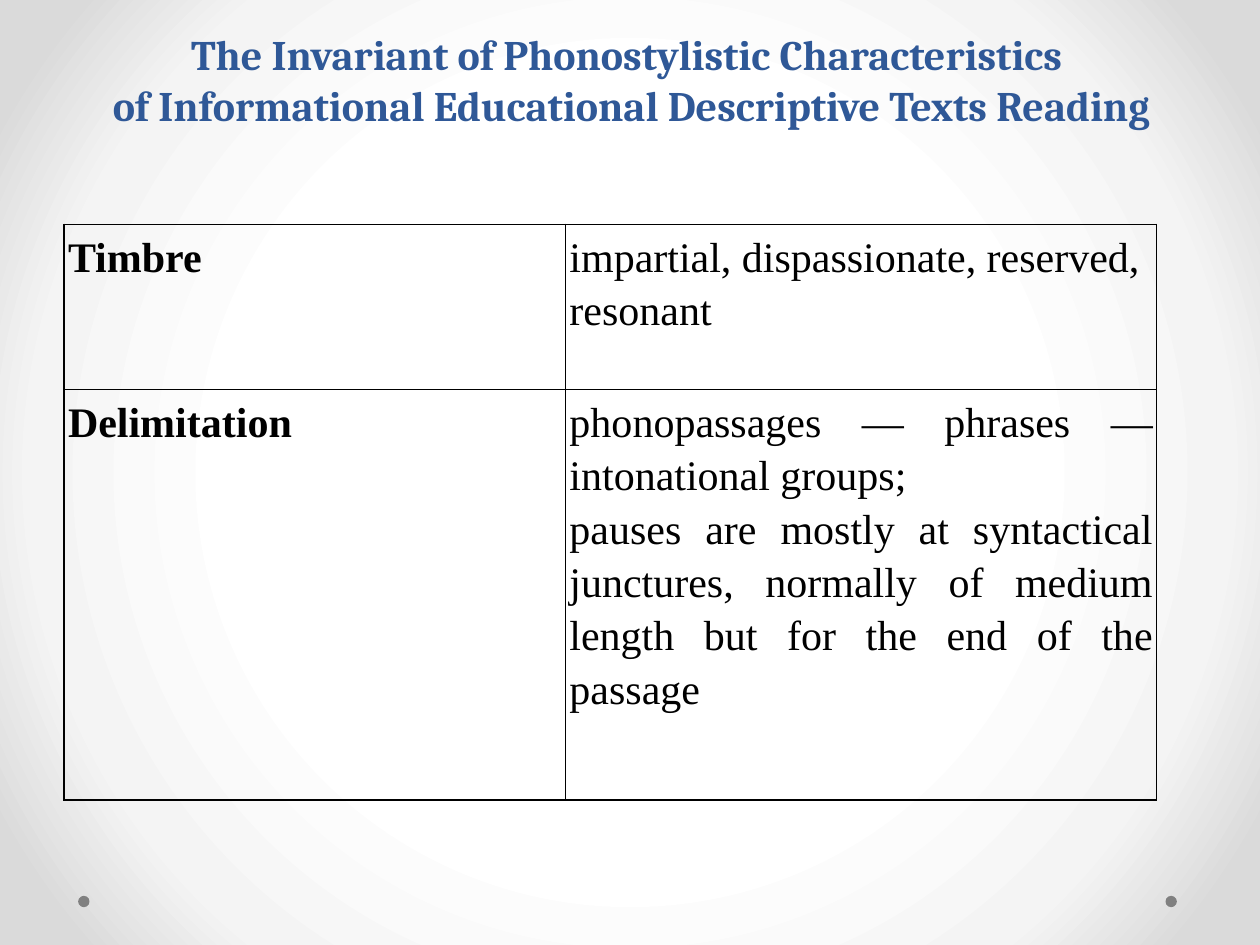
import pptx
import pptx.util
import pptx.oxml
import pptx.oxml.ns
import pptx.dml.color
import pptx.enum.text
import pptx.enum.shapes
from pptx.util import Inches

TITLE = ("The Invariant of Phonostylistic Characteristics \v"
         "of Informational Educational Descriptive Texts Reading")
ROWS = [
    ("Timbre", ["impartial, dispassionate, reserved, resonant"], "l"),
    ("Delimitation", [
        "phonopassages — phrases — intonational groups; ",
        "pauses are mostly at syntactical junctures, normally of medium "
        "length but for the end of the passage"], "j"),
]
WIDTHS = [3.98, 4.69]
HEIGHTS = [1.31, 3.26]
DOTS = [0.62, 9.25]
STOPS = [(50, "white"), (76, "pale"), (92, "grey")]
COLORS = {"white": "FFFFFF", "pale": "F4F4F4", "grey": "DADADA",
          "dot": "808080", "title": "2F5897", "ink": "000000"}
ALIGN = {"l": pptx.enum.text.PP_ALIGN.LEFT,
         "c": pptx.enum.text.PP_ALIGN.CENTER,
         "j": pptx.enum.text.PP_ALIGN.JUSTIFY}
NS = pptx.oxml.ns.nsdecls("a")


def color(name):
    return pptx.dml.color.RGBColor.from_string(COLORS[name])


def write(frame, lines, font="Times New Roman", size=24, ink="ink",
          bold=False, align="l", space=1.0):
    frame.word_wrap = True
    frame.text = "\n".join(lines)
    for para in frame.paragraphs:
        para.alignment = ALIGN[align]
        para.line_spacing = space
        for run in para.runs:
            run.font.name = font
            run.font.size = pptx.util.Pt(size)
            run.font.bold = bold
            run.font.color.rgb = color(ink)


def paint(slide):
    slide.background.fill.solid()
    solid = slide.element.xpath(".//p:bgPr/a:solidFill")[0]
    stops = "".join(
        f'<a:gs pos="{pos * 1000}"><a:srgbClr val="{COLORS[name]}"/></a:gs>'
        for pos, name in STOPS)
    grad = pptx.oxml.parse_xml(
        f'<a:gradFill {NS} rotWithShape="1"><a:gsLst>{stops}</a:gsLst>'
        '<a:path path="circle"><a:fillToRect l="50000" t="50000" '
        'r="50000" b="50000"/></a:path></a:gradFill>')
    solid.getparent().replace(solid, grad)


def frame_cell(cell):
    cell.margin_left = cell.margin_right = Inches(0.03)
    cell.margin_top = cell.margin_bottom = Inches(0.03)
    cell.fill.background()
    props = cell._tc.get_or_add_tcPr()
    for spot, side in enumerate("LRTB"):
        props.insert(spot, pptx.oxml.parse_xml(
            f'<a:ln{side} {NS} w="12700"><a:solidFill>'
            f'<a:srgbClr val="{COLORS["ink"]}"/></a:solidFill></a:ln{side}>'))


def main():
    deck = pptx.Presentation()
    deck.slide_width, deck.slide_height = Inches(10), Inches(7.5)
    slide = deck.slides.add_slide(deck.slide_layouts[6])
    paint(slide)

    for left in DOTS:
        dot = slide.shapes.add_shape(
            pptx.enum.shapes.MSO_SHAPE.OVAL,
            Inches(left), Inches(7.11), Inches(0.09), Inches(0.09))
        dot.shadow.inherit = False
        dot.fill.solid()
        dot.fill.fore_color.rgb = color("dot")
        dot.line.fill.background()

    title = slide.shapes.add_textbox(
        Inches(0.51), Inches(0.36), Inches(9), Inches(1.1)).text_frame
    title.vertical_anchor = pptx.enum.text.MSO_ANCHOR.BOTTOM
    title.margin_top = 0
    title.margin_bottom = Inches(0.43)
    write(title, [TITLE], font="Cambria", ink="title", bold=True, align="c")

    table = slide.shapes.add_table(
        len(ROWS), len(WIDTHS), Inches(0.51), Inches(1.78),
        Inches(sum(WIDTHS)), Inches(sum(HEIGHTS))).table
    table.first_row = table.horz_banding = False
    for col, width in zip(table.columns, WIDTHS):
        col.width = Inches(width)
    for row, height, (head, lines, align) in zip(table.rows, HEIGHTS, ROWS):
        row.height = Inches(height)
        name, body = row.cells
        write(name.text_frame, [head], bold=True, space=1.15)
        write(body.text_frame, lines, align=align, space=1.15)
        for cell in (name, body):
            frame_cell(cell)

    deck.save("out.pptx")


if __name__ == "__main__":
    main()
